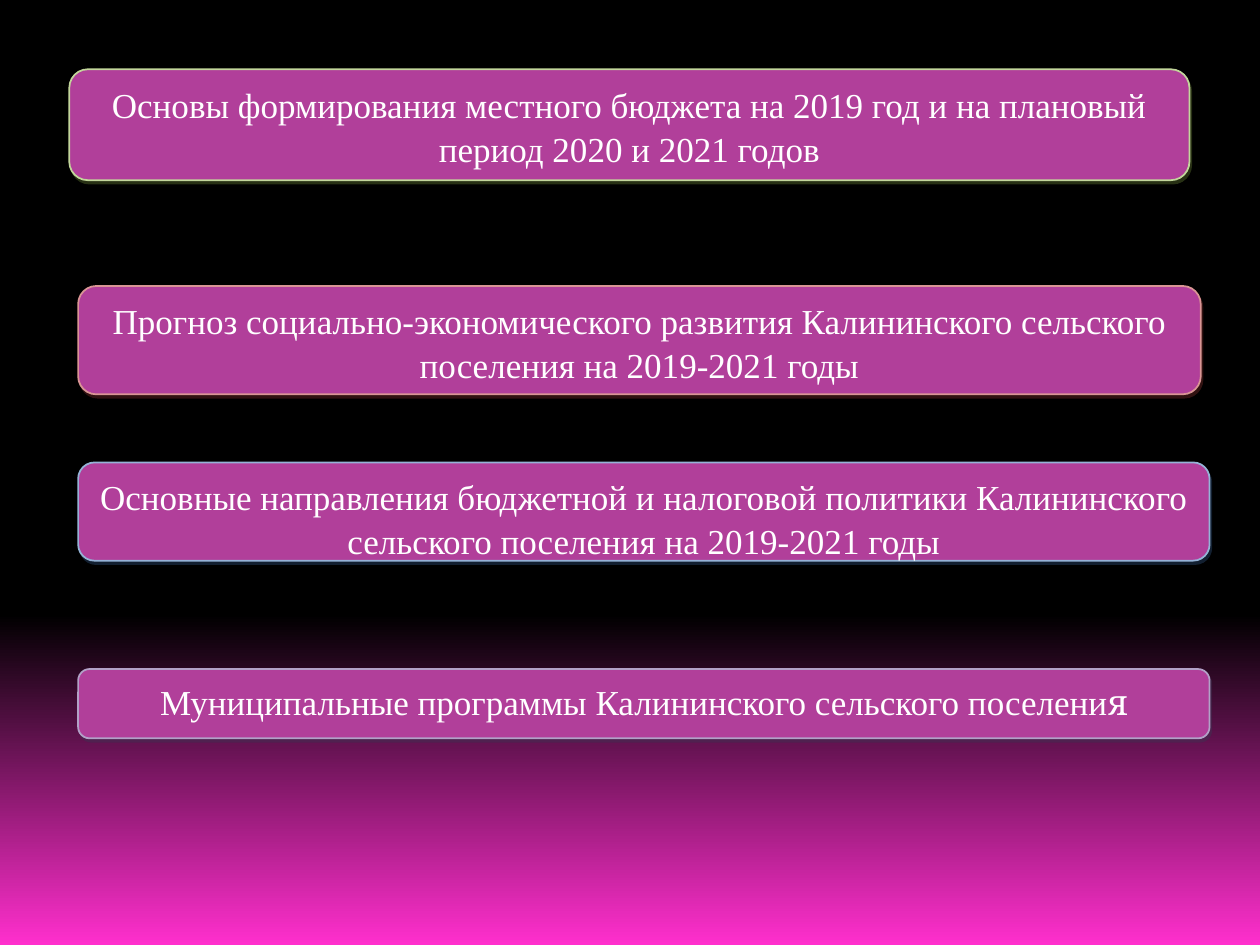
from lxml import etree
from pptx import Presentation
from pptx.dml.color import RGBColor
from pptx.enum import shapes, text
from pptx.oxml import ns
from pptx.util import Pt

SERIF = "Times New Roman"
BOX_LEFT = 44.64
# left, top, width, height, outline, shadow, runs
TOPICS = [
    (39.6, 39.6, 640.08, 63.36, "C2D69B", "4E6128",
     [("Основы формирования местного бюджета на 2019 год и на плановый "
       "период 2020 и 2021 годов", SERIF)]),
    (BOX_LEFT, 163.44, 641.52, 61.92, "D99594", "622423",
     [("Прогноз социально-экономического развития Калининского сельского "
       "поселения на 2019-2021 годы", SERIF)]),
    (BOX_LEFT, 264.24, 646.56, 56.16, "95B3D7", "243F60",
     [("Основные направления бюджетной и налоговой политики Калининского "
       "сельского поселения на 2019-2021 годы", SERIF)]),
    (BOX_LEFT, 382.32, 646.56, 39.6, "B2A1C7", "3F3151",
     [("Муниципальные программы Калининского сельского поселени", SERIF),
      ("я", "Cambria")]),
]


def rgb(value):
    return RGBColor.from_string(value)


def paint_background(slide):
    """Black for the upper 65 %, then fading to pink at the bottom."""
    fill = slide.background.fill
    fill.gradient()
    fill.gradient_angle = 270
    for stop, (position, color) in zip(
            fill.gradient_stops, [(0.65, "000000"), (1, "FF2FCD")]):
        stop.position = position
        stop.color.rgb = rgb(color)


def add_shadow(box, color):
    """Give the box a hard, half-transparent shadow to the lower right."""
    box.shadow.inherit = False
    effects = box._element.spPr.find(ns.qn("a:effectLst"))
    shadow = etree.SubElement(
        effects, ns.qn("a:outerShdw"), blurRad="0", dist=str(Pt(2.2)),
        dir=str(63 * 60000), algn="ctr", rotWithShape="0")
    tint = etree.SubElement(shadow, ns.qn("a:srgbClr"), val=color)
    etree.SubElement(tint, ns.qn("a:alpha"), val="50000")


def add_topic(slide, left, top, width, height, outline, shadow, runs):
    box = slide.shapes.add_shape(
        shapes.MSO_SHAPE.ROUNDED_RECTANGLE,
        Pt(left), Pt(top), Pt(width), Pt(height))
    box.fill.solid()
    box.fill.fore_color.rgb = rgb("B13F9A")
    box.line.color.rgb = rgb(outline)
    box.line.width = Pt(1)
    add_shadow(box, shadow)

    frame = box.text_frame
    frame.word_wrap = True
    frame.vertical_anchor = text.MSO_ANCHOR.TOP
    title = frame.paragraphs[0]
    title.alignment = text.PP_ALIGN.CENTER
    title.line_spacing = 1.05
    title.space_after = Pt(10)
    for words, font_name in runs:
        run = title.add_run()
        run.text = words
        run.font.name = font_name
        run.font.size = Pt(20)
        run.font.color.rgb = rgb("FFFFFF")


def main():
    deck = Presentation()
    deck.slide_width, deck.slide_height = Pt(720), Pt(540)
    slide = deck.slides.add_slide(deck.slide_layouts[6])
    paint_background(slide)
    for topic in TOPICS:
        add_topic(slide, *topic)
    deck.save("out.pptx")


if __name__ == "__main__":
    main()
